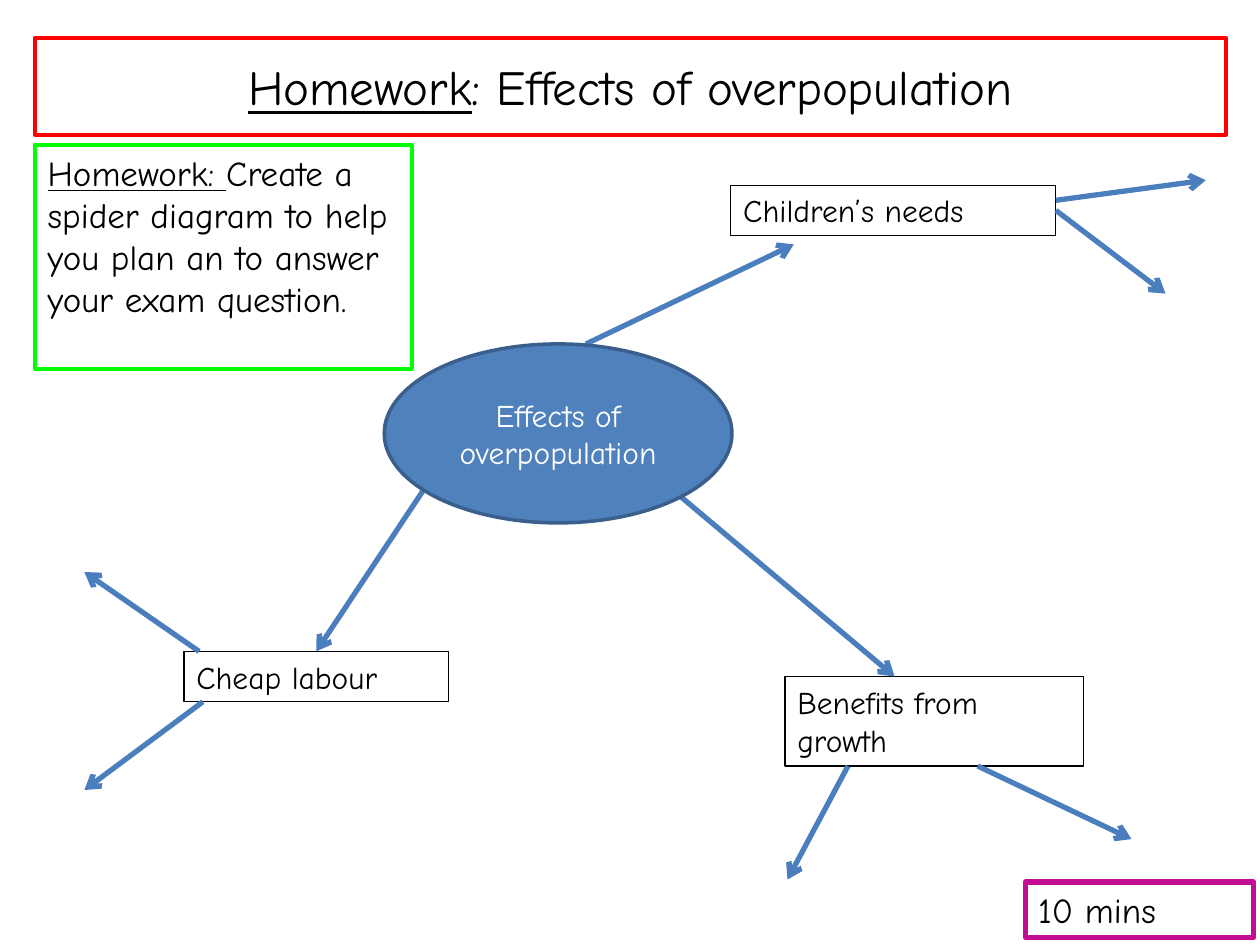
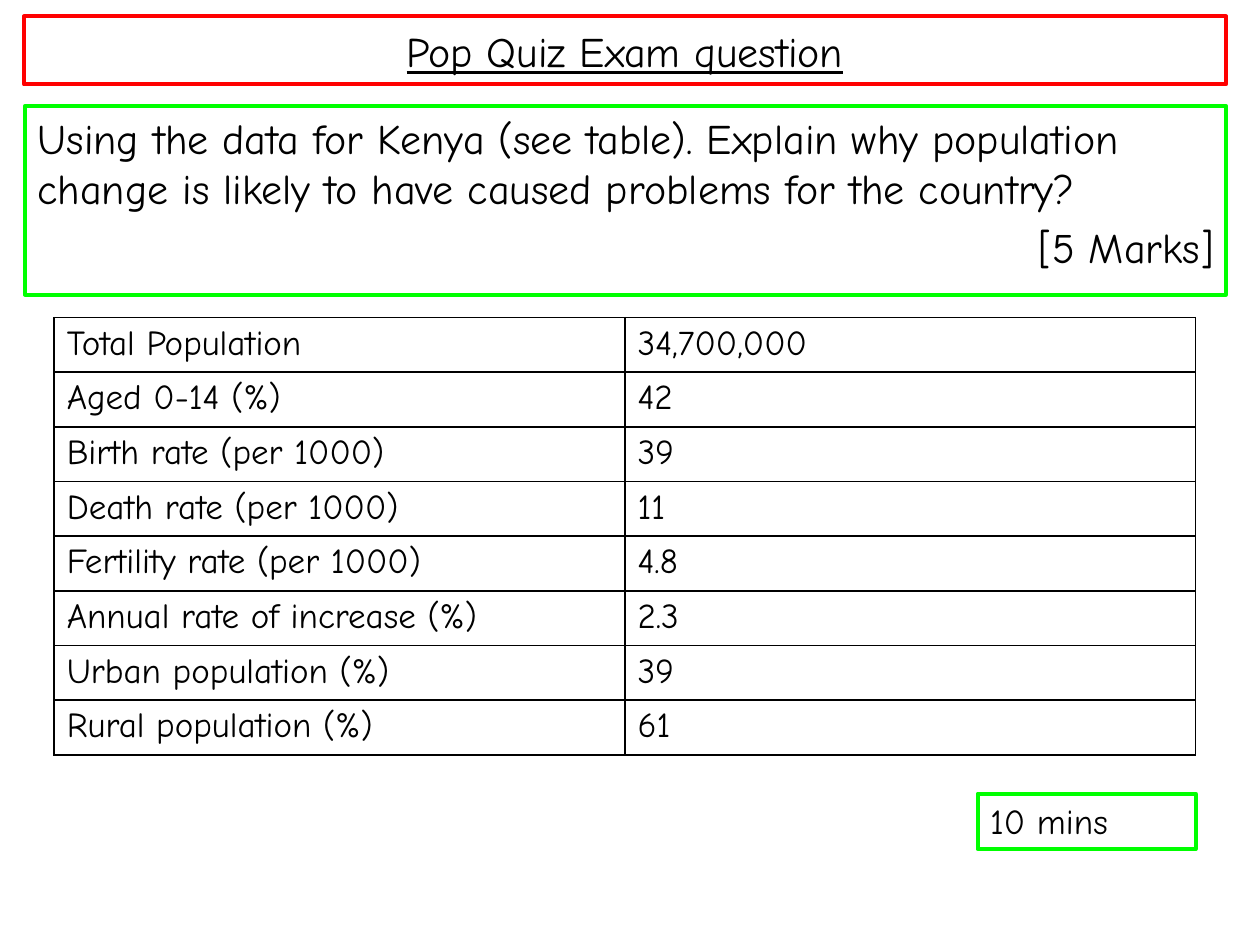
from lxml import etree
from pptx import Presentation
from pptx import util as u
from pptx.dml.color import RGBColor
from pptx.enum import shapes, text
from pptx.oxml.ns import qn

FONT = "Comic Neue"
COLORS = {
    "ink": "000000", "white": "FFFFFF", "title": "FF0000", "task": "00FF00",
    "timer": "C30D93", "arrow": "4B7EBC", "hub": "4F81BD", "hub_edge": "3A5F8C",
}
TITLE_ONLY = 5

# Places in the spider diagram are inches from its top left corner.
HUB = (2.38, 1.3, 2.76, 1.42)
# label, box, spoke (from, to), twigs (from, to), joined (spoke side, first twig side)
EFFECTS = [
    ("Children’s needs", (5.13, 0.04, 2.58, 0.4), ((3.98, 1.3), (5.63, 0.51)),
     [((7.71, 0.24), (8.58, 0.9)), ((7.71, 0.16), (8.9, 0))], (None, 3)),
    ("Cheap labour", (0.79, 3.74, 2.1, 0.4), ((2.89, 2.16), (1.84, 3.74)),
     [((0.94, 4.14), (0, 4.84)), ((0.91, 3.74), (0, 3.11))], (0, None)),
    ("Benefits from growth", (5.56, 3.94, 2.37, 0.71), ((4.73, 2.51), (6.43, 3.94)),
     [((6.06, 4.65), (5.58, 5.55)), ((7.09, 4.65), (8.31, 5.23))], (None, None)),
]

KENYA = [
    ("Total Population", "34,700,000"),
    ("Aged 0-14 (%)", "42"),
    ("Birth rate (per 1000)", "39"),
    ("Death rate (per 1000)", "11"),
    ("Fertility rate (per 1000)", "4.8"),
    ("Annual rate of increase (%)", "2.3"),
    ("Urban population (%)", "39"),
    ("Rural population (%)", "61"),
]


def rgb(color):
    return RGBColor.from_string(COLORS[color])


def inches(values):
    return [u.Inches(value) for value in values]


def shifted(box, origin):
    return (box[0] + origin[0], box[1] + origin[1], *box[2:])


def outline(shape, color, width):
    shape.line.color.rgb = rgb(color)
    shape.line.width = u.Pt(width)


def write(paragraph, runs, size, color="ink", align=text.PP_ALIGN.LEFT):
    """Add (wording, underlined) runs to a paragraph."""
    paragraph.alignment = align
    for wording, underlined in runs:
        run = paragraph.add_run()
        run.text = wording
        run.font.name = FONT
        run.font.size = u.Pt(size)
        run.font.color.rgb = rgb(color)
        run.font.underline = underlined


def add_title(slide, box, runs, size):
    title = slide.shapes.title
    title.left, title.top, title.width, title.height = inches(box)
    outline(title, "title", 2.25)
    title.text_frame.vertical_anchor = text.MSO_ANCHOR.MIDDLE
    write(title.text_frame.paragraphs[0], runs, size, align=text.PP_ALIGN.CENTER)


def add_framed_text(slide, box, runs, size, edge, width=2.25):
    framed = slide.shapes.add_textbox(*inches(box))
    framed.text_frame.word_wrap = True
    outline(framed, edge, width)
    write(framed.text_frame.paragraphs[0], runs, size)
    return framed


def add_arrow(slide, start, end):
    arrow = slide.shapes.add_connector(
        shapes.MSO_CONNECTOR.STRAIGHT, *inches((*start, *end)))
    outline(arrow, "arrow", 3)
    properties = arrow._element.spPr
    etree.SubElement(properties.find(qn("a:ln")), qn("a:tailEnd"), type="arrow")
    etree.SubElement(properties, qn("a:effectLst"))
    return arrow


def add_hub(slide, box):
    hub = slide.shapes.add_shape(shapes.MSO_SHAPE.OVAL, *inches(box))
    hub.shadow.inherit = False
    hub.fill.solid()
    hub.fill.fore_color.rgb = rgb("hub")
    outline(hub, "hub_edge", 2)
    hub.text_frame.vertical_anchor = text.MSO_ANCHOR.MIDDLE
    write(hub.text_frame.paragraphs[0], [("Effects of overpopulation", False)],
          18, "white", text.PP_ALIGN.CENTER)


def add_spider(slide, origin):
    for label, box, spoke_ends, twigs, (spoke_side, twig_side) in EFFECTS:
        effect = add_framed_text(
            slide, shifted(box, origin), [(label, False)], 18, "ink", 0.75)
        spoke, first_twig, _ = [
            add_arrow(slide, shifted(start, origin), shifted(end, origin))
            for start, end in [spoke_ends, *twigs]]
        if spoke_side is not None:
            spoke.end_connect(effect, spoke_side)
        if twig_side is not None:
            first_twig.begin_connect(effect, twig_side)
    add_hub(slide, shifted(HUB, origin))


def add_border(cell):
    properties = cell._tc.get_or_add_tcPr()
    for position, side in enumerate(("lnL", "lnR", "lnT", "lnB")):
        line = etree.Element(qn(f"a:{side}"), w=str(u.Pt(1)))
        fill = etree.SubElement(line, qn("a:solidFill"))
        etree.SubElement(fill, qn("a:srgbClr"), val=COLORS["ink"])
        properties.insert(position, line)


def add_data_table(slide, box):
    table = slide.shapes.add_table(len(KENYA), 2, *inches(box)).table
    table.first_row = table.horz_banding = False
    for row, values in zip(table.rows, KENYA):
        row.height = u.Inches(box[3] / len(KENYA))
        for cell, value in zip(row.cells, values):
            cell.fill.background()
            add_border(cell)
            write(cell.text_frame.paragraphs[0], [(value, False)], 20)


def add_timer(slide, box, edge, width):
    add_framed_text(slide, box, [("10 mins", False)], 20, edge, width)


def build_homework(slide):
    add_title(slide, (0.28, 0.3, 9.45, 0.77),
              [("Homework", True), (": Effects of overpopulation", False)], 28)
    add_spider(slide, (0.67, 1.43))
    add_framed_text(
        slide, (0.28, 1.15, 2.99, 1.78),
        [("Homework: ", True),
         ("Create a spider diagram to help you plan an to answer your exam question.",
          False)], 20, "task")
    add_timer(slide, (8.14, 7, 1.81, 0.44), "timer", 3)


def build_exam_question(slide):
    add_title(slide, (0.19, 0.13, 9.54, 0.54), [("Pop Quiz Exam question", True)], 24)
    question = add_framed_text(
        slide, (0.2, 0.84, 9.53, 1.5),
        [("Using the data for Kenya (see table). Explain why population change "
          "is likely to have caused problems for the country?", False)], 24, "task")
    marks = question.text_frame.add_paragraph()
    marks.space_before = u.Pt(4.8)
    write(marks, [("[5 Marks]", False)], 24, align=text.PP_ALIGN.RIGHT)
    add_data_table(slide, (0.43, 2.52, 9.06, 3.36))
    add_timer(slide, (7.76, 6.3, 1.73, 0.44), "task", 2.25)


def main():
    deck = Presentation()
    deck.slide_width, deck.slide_height = inches((10, 7.5))
    for build in (build_homework, build_exam_question):
        build(deck.slides.add_slide(deck.slide_layouts[TITLE_ONLY]))
    deck.save("out.pptx")


if __name__ == "__main__":
    main()
